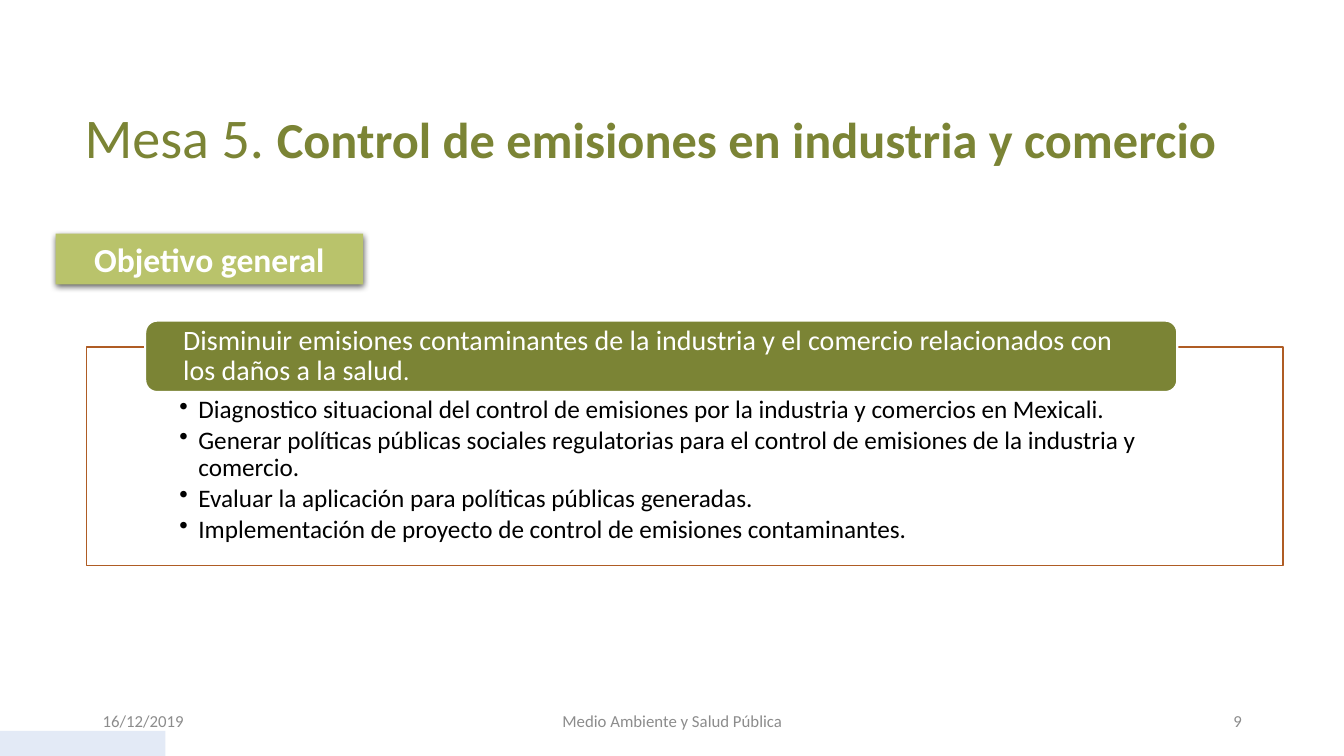
import pptx
import pptx.util
import pptx.oxml
import pptx.dml.color
import pptx.enum.shapes
import pptx.enum.text
import pptx.oxml.ns

Cm, Pt = pptx.util.Cm, pptx.util.Pt
RGB = pptx.dml.color.RGBColor.from_string
SHAPE = pptx.enum.shapes.MSO_SHAPE
ALIGN = pptx.enum.text.PP_ALIGN
ANCHOR = pptx.enum.text.MSO_ANCHOR
NS = pptx.oxml.ns.nsdecls("a")

COLORS = {
    "olive": "7B8435",
    "lime": "B9C36B",
    "rust": "AF5C24",
    "pale": "E3EAF6",
    "grey": "8C8C8C",
    "white": "FFFFFF",
    "black": "000000",
}


def add_box(kind, left, top, width, height, fill, line=None, weight=1):
    sp = s.shapes.add_shape(kind, Cm(left), Cm(top), Cm(width), Cm(height))
    sp.shadow.inherit = False
    sp.fill.solid()
    sp.fill.fore_color.rgb = RGB(COLORS[fill])
    if line:
        sp.line.color.rgb = RGB(COLORS[line])
        sp.line.width = Pt(weight)
    else:
        sp.line.fill.background()
    return sp


def add_run(p, text, size, color, bold=False):
    r = p.add_run()
    r.text = text
    for name, value in {"name": "Calibri", "size": Pt(size), "bold": bold}.items():
        setattr(r.font, name, value)
    r.font.color.rgb = RGB(COLORS[color])


prs = pptx.Presentation()
prs.slide_width, prs.slide_height = Cm(33.87), Cm(19.05)
s = prs.slides.add_slide(prs.slide_layouts[5])

# Corner band
add_box(SHAPE.RECTANGLE, 0, 18.42, 4.17, 0.63, "pale")

# Title
title = s.shapes.title
frame = {"left": 1.88, "top": 1.75, "width": 29.44, "height": 3.58}
for name, value in frame.items():
    setattr(title, name, Cm(value))
tf = title.text_frame
tf.auto_size = pptx.enum.text.MSO_AUTO_SIZE.NONE
tf.vertical_anchor = ANCHOR.MIDDLE
p = tf.paragraphs[0]
p.alignment = ALIGN.LEFT
p.line_spacing = 0.9
add_run(p, "Mesa 5. ", 40, "olive")
add_run(p, "Control de emisiones en industria y comercio", 36, "olive", True)

# Framed list of actions
panel = add_box(SHAPE.RECTANGLE, 2.18, 8.74, 30.15, 5.51, "white", "rust")
tf = panel.text_frame
tf.word_wrap = True
tf.vertical_anchor = ANCHOR.TOP
margins = {"margin_left": 2.34, "margin_top": 1.27, "margin_right": 2.34, "margin_bottom": 0.36}
for name, value in margins.items():
    setattr(tf, name, Cm(value))
actions = [
    "Diagnostico situacional del control de emisiones por la industria y comercios en Mexicali.",
    "Generar políticas públicas sociales regulatorias para el control de emisiones de la industria y comercio.",
    "Evaluar la aplicación para políticas públicas generadas.",
    "Implementación de proyecto de control de emisiones contaminantes.",
]
for i, action in enumerate(actions):
    p = tf.add_paragraph() if i else tf.paragraphs[0]
    p.alignment = ALIGN.LEFT
    p.line_spacing = 0.9
    p.space_after = Pt(2.5)
    pPr = p._p.get_or_add_pPr()
    pPr.set("marL", str(Cm(0.48)))
    pPr.set("indent", str(-Cm(0.48)))
    pPr.append(pptx.oxml.parse_xml(f'<a:buChar {NS} char="•"/>'))
    add_run(p, action, 18, "black")

# Objective heading over the frame
heading = add_box(SHAPE.ROUNDED_RECTANGLE, 3.66, 8.08, 26.01, 1.8, "olive", "white", 1.5)
tf = heading.text_frame
tf.word_wrap = True
tf.vertical_anchor = ANCHOR.MIDDLE
margins = {"margin_left": 0.87, "margin_top": 0, "margin_right": 0.87, "margin_bottom": 0}
for name, value in margins.items():
    setattr(tf, name, Cm(value))
p = tf.paragraphs[0]
p.alignment = ALIGN.LEFT
p.line_spacing = 0.9
add_run(p, "Disminuir emisiones contaminantes de la industria y el comercio "
           "relacionados con los daños a la salud", 20, "white")
add_run(p, ".", 18, "white")

# Section label with a soft shadow
label = add_box(SHAPE.RECTANGLE, 1.4, 5.89, 7.75, 1.28, "lime")
effects = label._element.spPr.find(pptx.oxml.ns.qn("a:effectLst"))
effects.append(pptx.oxml.parse_xml(
    f'<a:outerShdw {NS} blurRad="{Pt(4.5)}" dist="{Pt(1.5)}" dir="5400000" rotWithShape="0">'
    f'<a:srgbClr val="{COLORS["black"]}"><a:alpha val="63000"/></a:srgbClr></a:outerShdw>'))
tf = label.text_frame
tf.word_wrap = True
p = tf.paragraphs[0]
p.alignment = ALIGN.CENTER
add_run(p, "Objetivo general", 24, "white", True)

# Footer
footers = [
    (2.34, 7.62, "16/12/2019", ALIGN.LEFT),
    (11.23, 11.43, "Medio Ambiente y Salud Pública", ALIGN.CENTER),
    (23.93, 7.62, "9", ALIGN.RIGHT),
]
for left, width, text, align in footers:
    tf = s.shapes.add_textbox(Cm(left), Cm(17.65), Cm(width), Cm(1.02)).text_frame
    tf.word_wrap = True
    tf.vertical_anchor = ANCHOR.MIDDLE
    p = tf.paragraphs[0]
    p.alignment = align
    add_run(p, text, 12, "grey")

prs.save("out.pptx")
